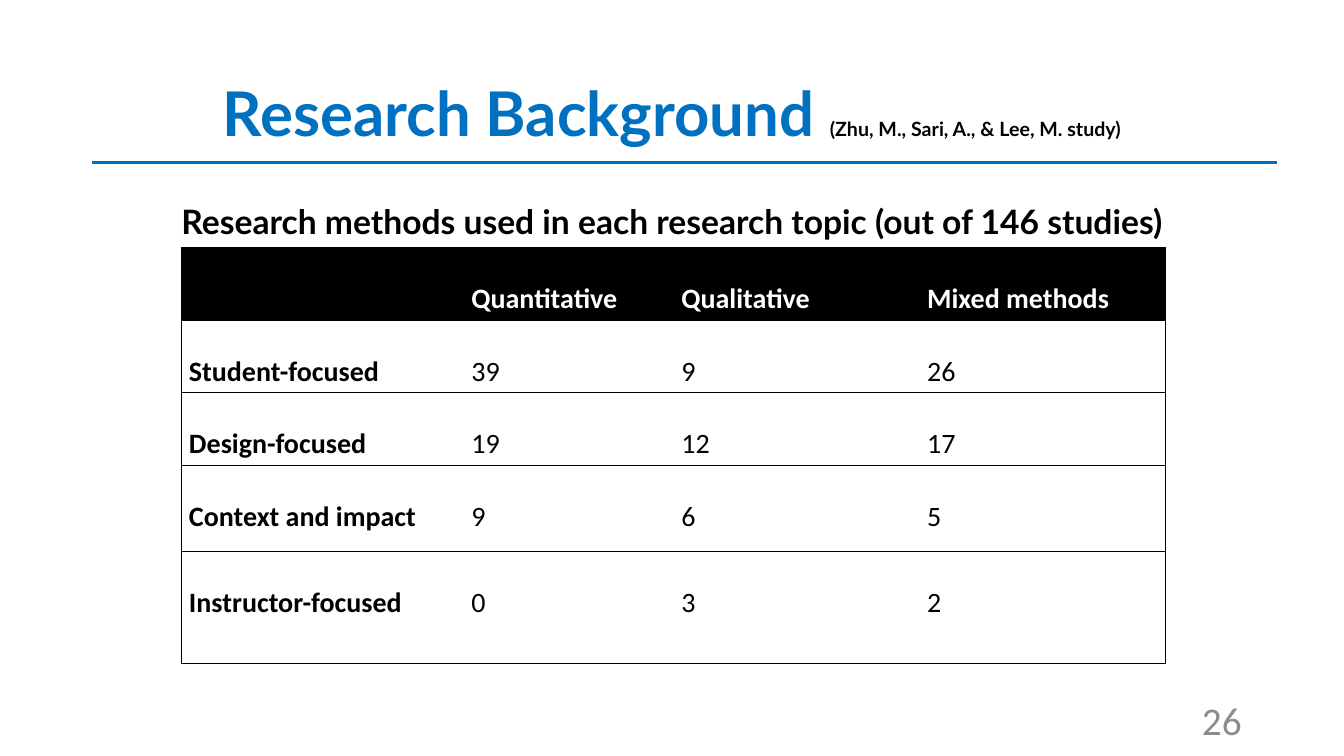
import pptx
import pptx.util
import pptx.dml.color
import pptx.enum.shapes
import pptx.enum.text
import pptx.oxml
import pptx.oxml.ns

PX = 9525  # EMU in one px, 96 px to the inch
COLORS = {"blue": "0070C0", "black": "000000", "white": "FFFFFF", "gray": "8C8C8C"}
ALIGN = pptx.enum.text.PP_ALIGN
ANCHOR = pptx.enum.text.MSO_ANCHOR

COLUMN_WIDTHS = [269, 200, 234, 234]
ROW_HEIGHTS = [69, 69, 69, 82, 107]
METHODS_BY_TOPIC = [
    ["", "Quantitative", "Qualitative", "Mixed methods"],
    ["Student-focused", "39", "9", "26"],
    ["Design-focused", "19", "12", "17"],
    ["Context and impact", "9", "6", "5"],
    ["Instructor-focused", "0", "3", "2"],
]


def px(length):
    return pptx.util.Emu(length * PX)


def rgb(name):
    return pptx.dml.color.RGBColor.from_string(COLORS[name])


def add_text(para, text, *, size, color="black", font="Lato", bold=False):
    span = para.add_run()
    span.text = text
    span.font.name = font
    span.font.size = pptx.util.Pt(size)
    span.font.bold = bold
    span.font.color.rgb = rgb(color)


def set_border(cell, side, visible):
    """Rule one side (L, R, T or B) of a cell, or leave it open."""
    paint = f'<a:solidFill><a:srgbClr val="{COLORS["black"]}"/></a:solidFill>' if visible else "<a:noFill/>"
    namespace = pptx.oxml.ns.nsdecls("a")
    width = pptx.util.Pt(0.5)
    border = pptx.oxml.parse_xml(f'<a:ln{side} {namespace} w="{width}">{paint}</a:ln{side}>')
    cell._tc.get_or_add_tcPr().append(border)


class SlideBuilder:
    def __init__(self, page):
        self.page = page

    def text_box(self, left, top, width, height, *, align, anchor=ANCHOR.TOP, spacing=1.0):
        """Add a one-paragraph text box and return its paragraph."""
        box = self.page.shapes.add_textbox(px(left), px(top), px(width), px(height))
        box.text_frame.word_wrap = True
        box.text_frame.vertical_anchor = anchor
        para = box.text_frame.paragraphs[0]
        para.alignment = align
        para.line_spacing = spacing
        return para

    def rule(self, left, right, height, color, weight):
        line = self.page.shapes.add_connector(
            pptx.enum.shapes.MSO_CONNECTOR.STRAIGHT, px(left), px(height), px(right), px(height))
        line.line.color.rgb = rgb(color)
        line.line.width = pptx.util.Pt(weight)
        effects = pptx.oxml.parse_xml(f'<a:effectLst {pptx.oxml.ns.nsdecls("a")}/>')
        line._element.spPr.append(effects)

    def table(self, left, top, widths, heights, rows):
        frame = self.page.shapes.add_table(
            len(rows), len(widths), px(left), px(top), px(sum(widths)), px(sum(heights)))
        grid = frame.table
        for column, width in zip(grid.columns, widths):
            column.width = px(width)
        for row, height in zip(grid.rows, heights):
            row.height = px(height)
        for row_index, values in enumerate(rows):
            for column_index, value in enumerate(values):
                cell = grid.cell(row_index, column_index)
                self.table_cell(cell, value, header=row_index == 0, first=column_index == 0,
                                last=column_index == len(widths) - 1)

    def table_cell(self, cell, value, *, header, first, last):
        cell.margin_left = cell.margin_right = px(7)
        cell.margin_top = cell.margin_bottom = 0
        for side, visible in (("L", first), ("R", last), ("T", True), ("B", True)):
            set_border(cell, side, visible)
        cell.fill.solid()
        cell.fill.fore_color.rgb = rgb("black" if header else "white")
        para = cell.text_frame.paragraphs[0]
        para.line_spacing = 2.0
        if value:
            add_text(para, value, size=20, font="Calibri", bold=header or first,
                     color="white" if header else "black")


def main():
    deck = pptx.Presentation()
    deck.slide_width, deck.slide_height = px(1280), px(720)
    builder = SlideBuilder(deck.slides.add_slide(deck.slide_layouts[6]))

    title = builder.text_box(88, 42, 1104, 139, align=ALIGN.CENTER, anchor=ANCHOR.MIDDLE, spacing=0.9)
    add_text(title, "Research Background ", size=44, color="blue", bold=True)
    add_text(title, "(Zhu, M., Sari, A., & Lee, M. study)", size=14, bold=True)
    builder.rule(88, 1216, 155, "blue", 2)

    number = builder.text_box(904, 667, 288, 38, align=ALIGN.RIGHT, anchor=ANCHOR.MIDDLE)
    add_text(number, "26", size=28, color="gray", font="Calibri")

    builder.table(173, 236, COLUMN_WIDTHS, ROW_HEIGHTS, METHODS_BY_TOPIC)
    caption = builder.text_box(88, 164, 1104, 133, align=ALIGN.CENTER, spacing=1.6)
    add_text(caption, "Research methods used in each research topic (out of 146 studies)", size=24, bold=True)

    deck.save("out.pptx")


if __name__ == "__main__":
    main()
